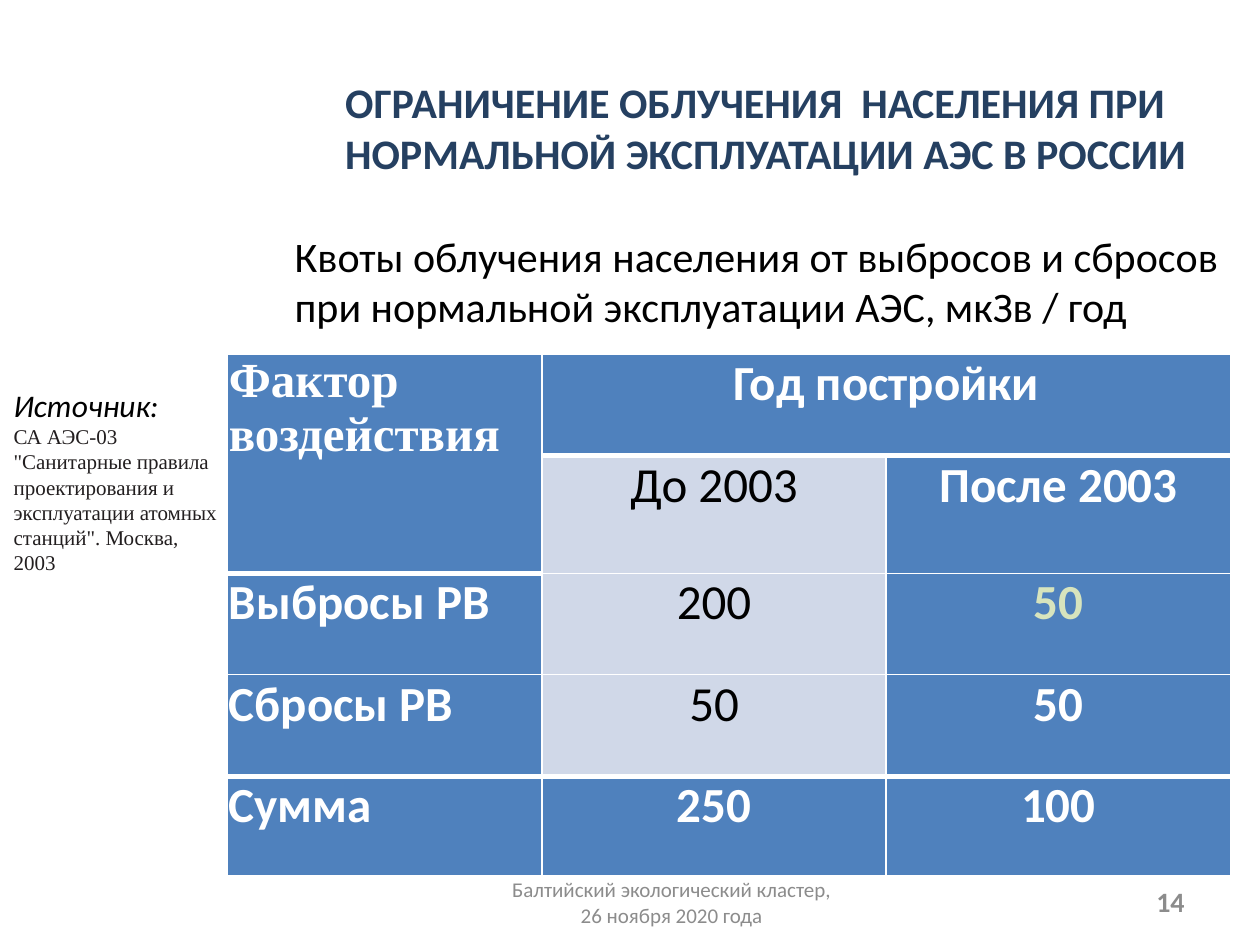
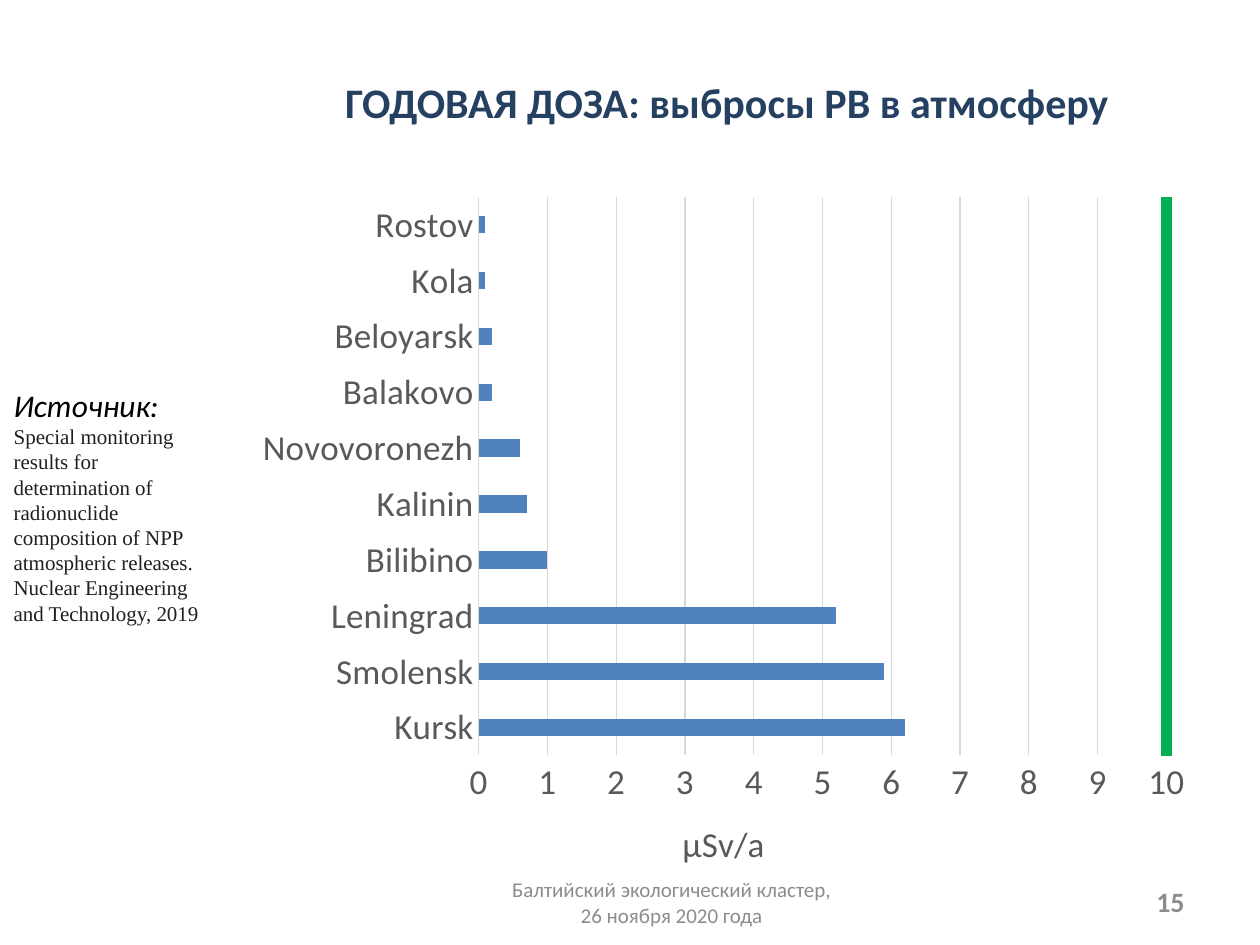
from lxml import etree
from pptx import Presentation
from pptx.chart.data import CategoryChartData
from pptx.dml.color import RGBColor
from pptx.enum.chart import XL_CHART_TYPE, XL_TICK_MARK
from pptx.enum.shapes import MSO_CONNECTOR
from pptx.enum.text import MSO_ANCHOR, MSO_AUTO_SIZE, PP_ALIGN
from pptx.oxml import parse_xml
from pptx.oxml.ns import nsdecls, qn
from pptx.util import Pt

LEFT, CENTER, RIGHT = PP_ALIGN.LEFT, PP_ALIGN.CENTER, PP_ALIGN.RIGHT
TOP, MIDDLE = MSO_ANCHOR.TOP, MSO_ANCHOR.MIDDLE
NO_AUTOFIT = MSO_AUTO_SIZE.NONE
NO_TICKS = XL_TICK_MARK.NONE
BARS = XL_CHART_TYPE.BAR_CLUSTERED
STRAIGHT = MSO_CONNECTOR.STRAIGHT

NAVY = RGBColor(0x25, 0x40, 0x61)
BLUE = RGBColor(0x4F, 0x81, 0xBD)
PALE_BLUE = RGBColor(0xD0, 0xD8, 0xE8)
PALE_GREEN = RGBColor(0xD7, 0xE4, 0xBD)
GREEN = RGBColor(0x00, 0xB0, 0x50)
WHITE = RGBColor(0xFF, 0xFF, 0xFF)
BLACK = RGBColor(0x00, 0x00, 0x00)
INK = RGBColor(0x22, 0x1E, 0x1F)
FOOTER_GRAY = RGBColor(0x8C, 0x8C, 0x8C)
AXIS_GRAY = RGBColor(0x59, 0x59, 0x59)
GRID_GRAY = RGBColor(0xD9, 0xD9, 0xD9)

SANS, SERIF = "Calibri", "Times New Roman"
SLIDE_SIZE = (720, 540)
TITLE_ONLY = 5

# left, top, width, height
TITLE_BOX = (190, 40.3, 513.4, 65.5)
SOURCE_BOX = (0.7, 217, 131, 145)
FOOTER_BOX = (283, 501, 201.6, 29)
NUMBER_BOX = (516.2, 500.4, 167.8, 29)
QUOTA_CAPTION_BOX = (161.3, 128.2, 554, 65.5)
QUOTA_TABLE_BOX = (129.6, 202.3, 573.6, 298)
DOSE_CHART_BOX = (121.7, 100.1, 562.3, 401)

FOOTER = "Балтийский экологический кластер, 26 ноября 2020 года"

QUOTA_ROWS = [
    ("Фактор воздействия", "Год постройки", ""),
    ("", "До 2003", "После 2003"),
    ("Выбросы РВ", "200", "50"),
    ("Сбросы РВ", "50", "50"),
    ("Сумма", "250", "100"),
]
ROW_HEIGHTS = (58, 67, 58, 58, 57)
COLUMN_SHARES = (0.314, 0.343, 0.343)
THICK_BELOW = {(0, 0), (0, 1), (0, 2), (1, 0), (3, 0), (3, 1), (3, 2)}

ANNUAL_DOSES = {
    "Kursk": 6.2, "Smolensk": 5.9, "Leningrad": 5.2, "Bilibino": 1,
    "Kalinin": 0.7, "Novovoronezh": 0.6, "Balakovo": 0.2,
    "Beloyarsk": 0.2, "Kola": 0.1, "Rostov": 0.1,
}
PLOT_AREA = {"x": 0.27, "y": 0.031, "w": 0.699, "h": 0.796}
DOSE_MAX = 10


def points(*lengths):
    return [Pt(length) for length in lengths]


def format_font(font, size, color, face=SANS, bold=False, italic=False):
    font.name, font.size = face, Pt(size)
    font.bold, font.italic = bold, italic
    font.color.rgb = color


def write(paragraph, text, align=LEFT, **font_format):
    paragraph.alignment = align
    run = paragraph.add_run()
    run.text = text
    format_font(run.font, **font_format)


def text_frame(slide, box, anchor=TOP):
    frame = slide.shapes.add_textbox(*points(*box)).text_frame
    frame.word_wrap = True
    frame.vertical_anchor = anchor
    return frame


def add_title(slide, text):
    title = slide.shapes.title
    title.left, title.top, title.width, title.height = points(*TITLE_BOX)
    frame = title.text_frame
    frame.auto_size = NO_AUTOFIT
    frame.vertical_anchor = TOP
    write(frame.paragraphs[0], text, size=24, color=NAVY, bold=True)


def add_source(slide, reference):
    frame = text_frame(slide, SOURCE_BOX)
    write(frame.paragraphs[0], "Источник:", size=18, color=BLACK, italic=True)
    write(frame.add_paragraph(), reference, size=12, color=INK, face=SERIF)


def add_footer(slide, number):
    footer = text_frame(slide, FOOTER_BOX, MIDDLE)
    write(footer.paragraphs[0], FOOTER, CENTER, size=12, color=FOOTER_GRAY)
    page = text_frame(slide, NUMBER_BOX, MIDDLE)
    write(page.paragraphs[0], str(number), RIGHT, size=16, color=FOOTER_GRAY, bold=True)


def new_slide(prs, number, title, reference):
    """Add a slide with the title, source note and footer all slides share."""
    slide = prs.slides.add_slide(prs.slide_layouts[TITLE_ONLY])
    add_title(slide, title)
    add_source(slide, reference)
    add_footer(slide, number)
    return slide


def set_borders(cell, top, bottom):
    properties = cell._tc.get_or_add_tcPr()
    for side, width in (("L", 1), ("R", 1), ("T", top), ("B", bottom)):
        properties.append(parse_xml(
            f'<a:ln{side} {nsdecls("a")} w="{Pt(width)}"><a:solidFill>'
            f'<a:srgbClr val="{WHITE}"/></a:solidFill></a:ln{side}>'))


def fill_quota_cell(cell, row, col, text):
    old_limit = col == 1 and row in (1, 2, 3)
    if old_limit:
        color = BLACK
    else:
        color = PALE_GREEN if (row, col) == (2, 2) else WHITE
    set_borders(cell, top=3 if (row - 1, col) in THICK_BELOW else 1,
                bottom=3 if (row, col) in THICK_BELOW else 1)
    cell.fill.solid()
    cell.fill.fore_color.rgb = PALE_BLUE if old_limit else BLUE
    cell.margin_left = cell.margin_right = Pt(1.2)
    cell.margin_top = cell.margin_bottom = 0
    write(cell.text_frame.paragraphs[0], text, CENTER if col else LEFT, size=28,
          color=color, face=SANS if row or col else SERIF, bold=not old_limit)


def add_quota_table(slide, box):
    frame = slide.shapes.add_table(len(QUOTA_ROWS), len(COLUMN_SHARES), *points(*box))
    table = frame.table
    for column, share in zip(table.columns, COLUMN_SHARES):
        column.width = Pt(round(box[2] * share, 1))
    for table_row, height in zip(table.rows, ROW_HEIGHTS):
        table_row.height = Pt(height)
    table.cell(0, 0).merge(table.cell(1, 0))
    table.cell(0, 1).merge(table.cell(0, 2))
    for row, texts in enumerate(QUOTA_ROWS):
        for col, text in enumerate(texts):
            cell = table.cell(row, col)
            if not cell.is_spanned:
                fill_quota_cell(cell, row, col, text)


def fix_plot_area(chart):
    """Pin the inner plot area to fractions of the chart."""
    plot_area = chart._chartSpace.chart.plotArea
    for layout in plot_area.findall(qn("c:layout")):
        plot_area.remove(layout)
    layout = etree.Element(qn("c:layout"))
    manual = etree.SubElement(layout, qn("c:manualLayout"))
    settings = {"layoutTarget": "inner", "xMode": "edge", "yMode": "edge", **PLOT_AREA}
    for tag, value in settings.items():
        etree.SubElement(manual, qn(f"c:{tag}")).set("val", str(value))
    plot_area.insert(0, layout)


def format_dose_axes(chart):
    plants, doses = chart.category_axis, chart.value_axis
    for axis in (plants, doses):
        axis.major_tick_mark = axis.minor_tick_mark = NO_TICKS
        format_font(axis.tick_labels.font, 20, AXIS_GRAY)
    plants.has_major_gridlines = False
    doses.minimum_scale, doses.maximum_scale, doses.major_unit = 0, DOSE_MAX, 1
    doses.has_major_gridlines = True
    for line in (plants.format.line, doses.major_gridlines.format.line):
        line.color.rgb = GRID_GRAY
        line.width = Pt(0.75)
    doses.format.line.fill.background()
    write(doses.axis_title.text_frame.paragraphs[0], "µSv/a", CENTER,
          size=20, color=AXIS_GRAY)


def add_dose_chart(slide, box):
    data = CategoryChartData()
    data.categories = list(ANNUAL_DOSES)
    data.add_series("Series 1", list(ANNUAL_DOSES.values()))
    chart = slide.shapes.add_chart(BARS, *points(*box), data).chart
    chart.has_title = chart.has_legend = False
    format_font(chart.font, 20, BLACK)
    plot = chart.plots[0]
    plot.gap_width, plot.vary_by_categories = 219, False
    bars = plot.series[0].format.fill
    bars.solid()
    bars.fore_color.rgb = BLUE
    format_dose_axes(chart)
    fix_plot_area(chart)


def add_dose_limit(slide, box):
    """Draw the limit line at the right edge of the chart's plot area."""
    left, top, width, height = box
    x = left + width * (PLOT_AREA["x"] + PLOT_AREA["w"])
    plot_top = top + height * PLOT_AREA["y"]
    plot_bottom = plot_top + height * PLOT_AREA["h"]
    limit = slide.shapes.add_connector(STRAIGHT, *points(x, plot_bottom, x, plot_top))
    limit.line.color.rgb = GREEN
    limit.line.width = Pt(6)
    etree.SubElement(limit._element.spPr, qn("a:effectLst"))


def build_quota_slide(prs):
    slide = new_slide(
        prs, 14,
        "ОГРАНИЧЕНИЕ ОБЛУЧЕНИЯ  НАСЕЛЕНИЯ ПРИ НОРМАЛЬНОЙ ЭКСПЛУАТАЦИИ АЭС В РОССИИ",
        'СА АЭС-03 "Санитарные правила проектирования и эксплуатации атомных '
        'станций". Москва, 2003')
    add_quota_table(slide, QUOTA_TABLE_BOX)
    caption = text_frame(slide, QUOTA_CAPTION_BOX)
    write(caption.paragraphs[0],
          "Квоты облучения населения от выбросов и сбросов при нормальной "
          "эксплуатации АЭС, мкЗв / год", size=24, color=BLACK)


def build_dose_slide(prs):
    slide = new_slide(
        prs, 15, "ГОДОВАЯ ДОЗА: выбросы РВ в атмосферу",
        "Special monitoring results for determination of radionuclide composition "
        "of NPP atmospheric releases. Nuclear Engineering and Technology, 2019")
    add_dose_chart(slide, DOSE_CHART_BOX)
    add_dose_limit(slide, DOSE_CHART_BOX)


def main():
    prs = Presentation()
    prs.slide_width, prs.slide_height = points(*SLIDE_SIZE)
    build_quota_slide(prs)
    build_dose_slide(prs)
    prs.save("out.pptx")


if __name__ == "__main__":
    main()
